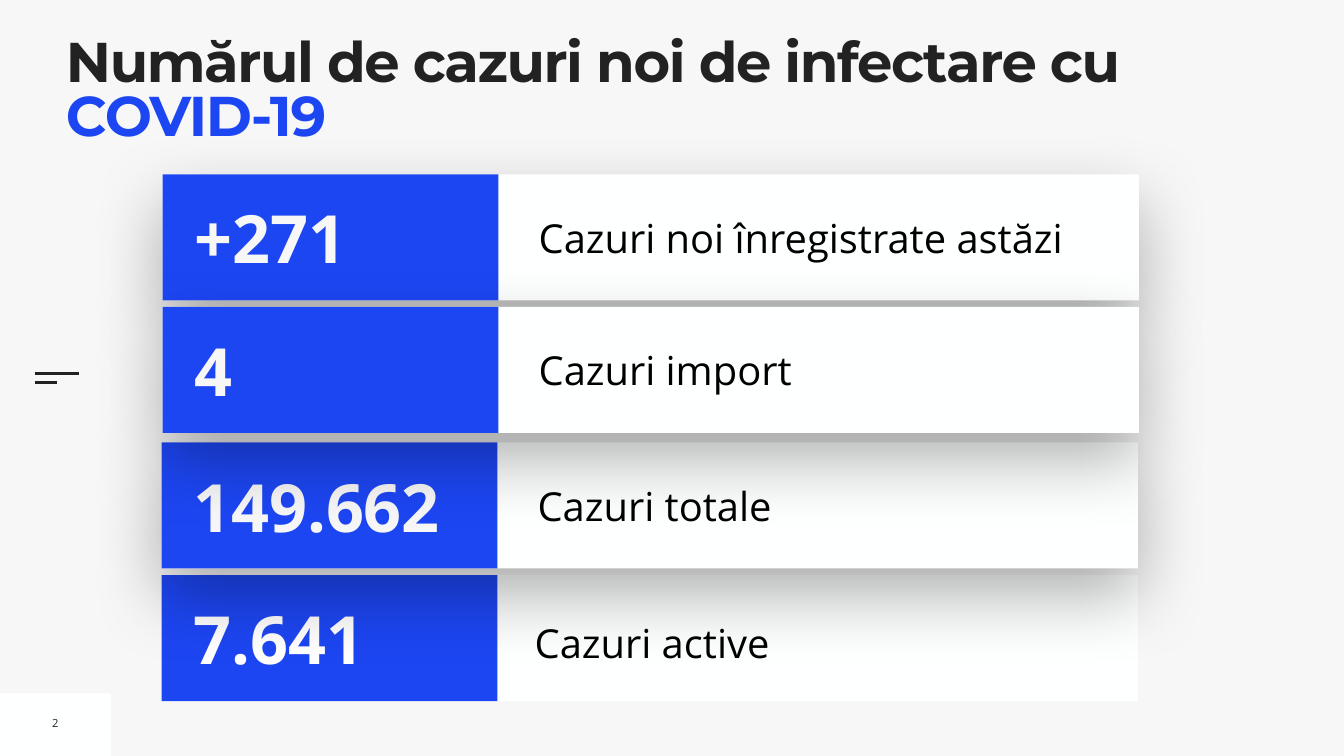
from dataclasses import dataclass

import pptx
import pptx.dml.color
import pptx.enum.shapes
import pptx.enum.text
import pptx.oxml
import pptx.oxml.ns
import pptx.util
from pptx.dml.color import RGBColor
from pptx.util import Inches

BLUE = RGBColor(0x1D, 0x46, 0xF3)
INK = RGBColor(0x22, 0x22, 0x22)
BLACK = RGBColor(0, 0, 0)
WHITE = RGBColor(0xFF, 0xFF, 0xFF)
CARD = RGBColor(0xFE, 0xFF, 0xFF)
PALE = RGBColor(0xF7, 0xF7, 0xF7)
NAMESPACE = pptx.oxml.ns.nsdecls("a")
ANCHOR = pptx.enum.text.MSO_ANCHOR
ALIGN = pptx.enum.text.PP_ALIGN


@dataclass
class CaseRow:
    left: float
    top: float
    count: str
    label: str
    count_color: RGBColor = PALE
    shadow: bool = True
    label_left: float = 7.36
    label_top: float = 0.67
    label_size: tuple[float, float] = (11.76, 1.16)
    label_inset: float = 0.1
    label_spacing: float = 1.0
    label_before: float = 0


# Back to front: each card's shadow falls on the rows drawn before it
ROWS = [
    CaseRow(3.21, 11.41, "7.641", "Cazuri active", WHITE, False,
            7.4, 0.58, (11.58, 1.25), 0, 1.3, 20),
    CaseRow(3.21, 8.78, "149.662", "Cazuri totale"),
    CaseRow(3.23, 3.46, "+271", "Cazuri noi înregistrate astăzi"),
    CaseRow(3.23, 6.09, "4", "Cazuri import"),
]


def add_block(page, left: float, top: float, width: float, height: float,
              color: RGBColor, shadow: bool = False):
    block = page.shapes.add_shape(
        pptx.enum.shapes.MSO_SHAPE.RECTANGLE,
        Inches(left), Inches(top), Inches(width), Inches(height))
    block.shadow.inherit = False
    block.fill.solid()
    block.fill.fore_color.rgb = color
    block.line.fill.background()
    if shadow:
        effects = block._element.spPr.find(pptx.oxml.ns.qn("a:effectLst"))
        effects.append(pptx.oxml.parse_xml(
            f'<a:outerShdw {NAMESPACE} blurRad="{pptx.util.Pt(100)}" '
            f'dist="{pptx.util.Pt(40)}" dir="5400000" rotWithShape="0">'
            '<a:srgbClr val="000000"><a:alpha val="30000"/></a:srgbClr>'
            '</a:outerShdw>'))
    return block


def add_rule(page, left: float, top: float, width: float):
    rule = page.shapes.add_connector(
        pptx.enum.shapes.MSO_CONNECTOR.STRAIGHT,
        Inches(left), Inches(top), Inches(left + width), Inches(top))
    rule.line.color.rgb = INK
    rule.line.width = pptx.util.Pt(3)
    rule._element.spPr.append(pptx.oxml.parse_xml(f"<a:effectLst {NAMESPACE}/>"))


def add_text(page, left: float, top: float, width: float, height: float,
             *parts: tuple[str, RGBColor], size: float, font: str = "Open Sans",
             bold: bool = False, align=ALIGN.LEFT, anchor=ANCHOR.MIDDLE,
             inset: float = 0.1, wrap: bool = True, line_spacing: float = 1.0,
             before: float = 0, tracking: float = 0):
    box = page.shapes.add_textbox(
        Inches(left), Inches(top), Inches(width), Inches(height))
    frame = box.text_frame
    frame.word_wrap = wrap
    frame.vertical_anchor = anchor
    frame.margin_left = frame.margin_right = Inches(inset)
    frame.margin_top = frame.margin_bottom = Inches(inset)
    para = frame.paragraphs[0]
    para.alignment = align
    para.line_spacing = line_spacing
    para.space_before = pptx.util.Pt(before)
    for text, color in parts:
        span = para.add_run()
        span.text = text
        span.font.name = font
        span.font.size = pptx.util.Pt(size)
        span.font.bold = bold
        span.font.color.rgb = color
        if tracking:
            span.font._element.set("spc", str(round(tracking * 100)))
    return box


def add_case_row(page, row: CaseRow):
    add_block(page, row.left, row.top, 19.37, 2.5, CARD, row.shadow)
    add_text(page, row.left + row.label_left, row.top + row.label_top,
             *row.label_size, (row.label, BLACK), size=57, inset=row.label_inset,
             line_spacing=row.label_spacing, before=row.label_before)
    add_block(page, row.left, row.top, 6.66, 2.5, BLUE)
    add_text(page, row.left + 0.53, row.top + 0.35, 6.03, 1.8,
             (row.count, row.count_color), size=95, bold=True)


def main():
    deck = pptx.Presentation()
    deck.slide_width, deck.slide_height = Inches(26.67), Inches(15)
    page = deck.slides.add_slide(deck.slide_layouts[6])
    page.background.fill.solid()
    page.background.fill.fore_color.rgb = PALE

    # Page number and side mark
    add_block(page, 0, 13.76, 2.2, 1.24, CARD)
    add_rule(page, 0.69, 7.41, 0.88)
    add_rule(page, 0.69, 7.59, 0.44)
    add_text(page, 0.93, 14.09, 0.34, 0.51, ("2", INK), size=16,
             align=ALIGN.CENTER, wrap=False)

    # Title
    add_text(page, 1.31, 0.78, 23.94, 1.58,
             ("Numărul de cazuri noi de infectare cu ", INK), ("COVID-19", BLUE),
             size=80, font="Montserrat", bold=True, anchor=ANCHOR.TOP, inset=0,
             line_spacing=0.8, tracking=-2)

    # Case counts
    for row in ROWS:
        add_case_row(page, row)

    deck.save("out.pptx")


if __name__ == "__main__":
    main()
